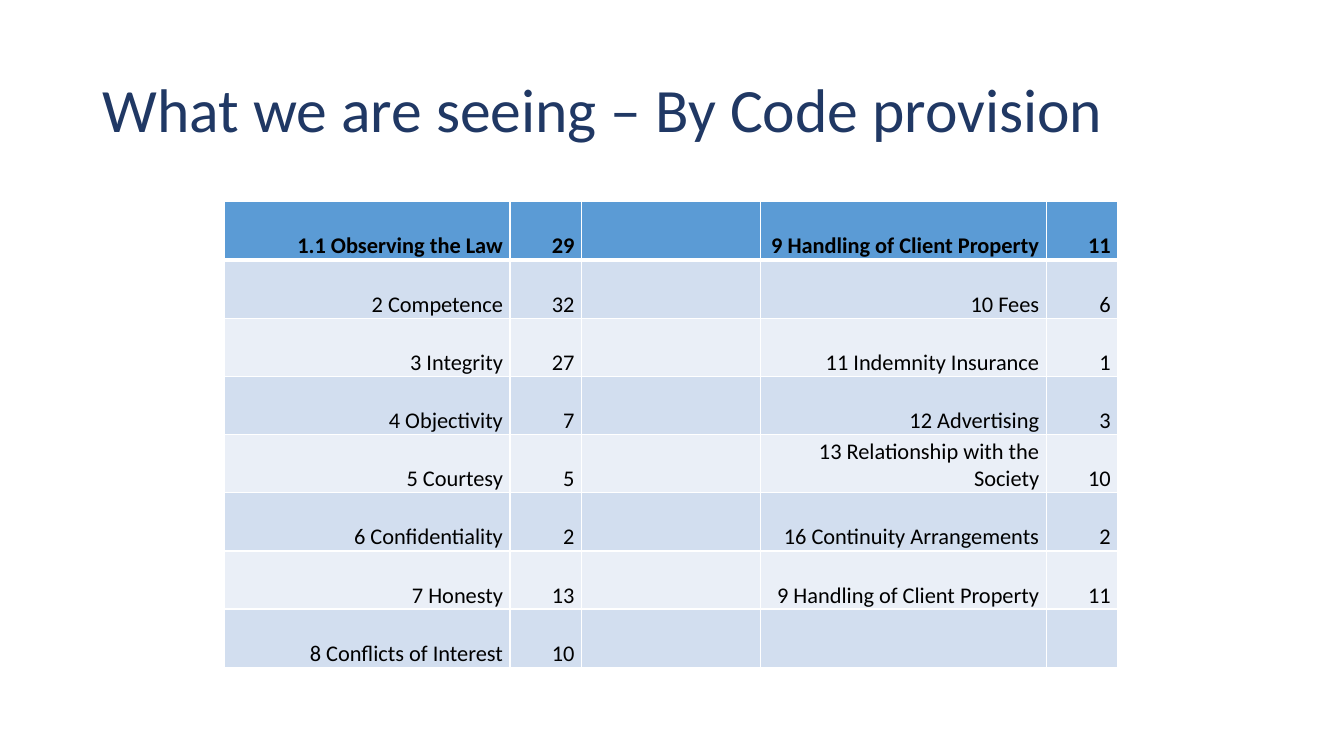
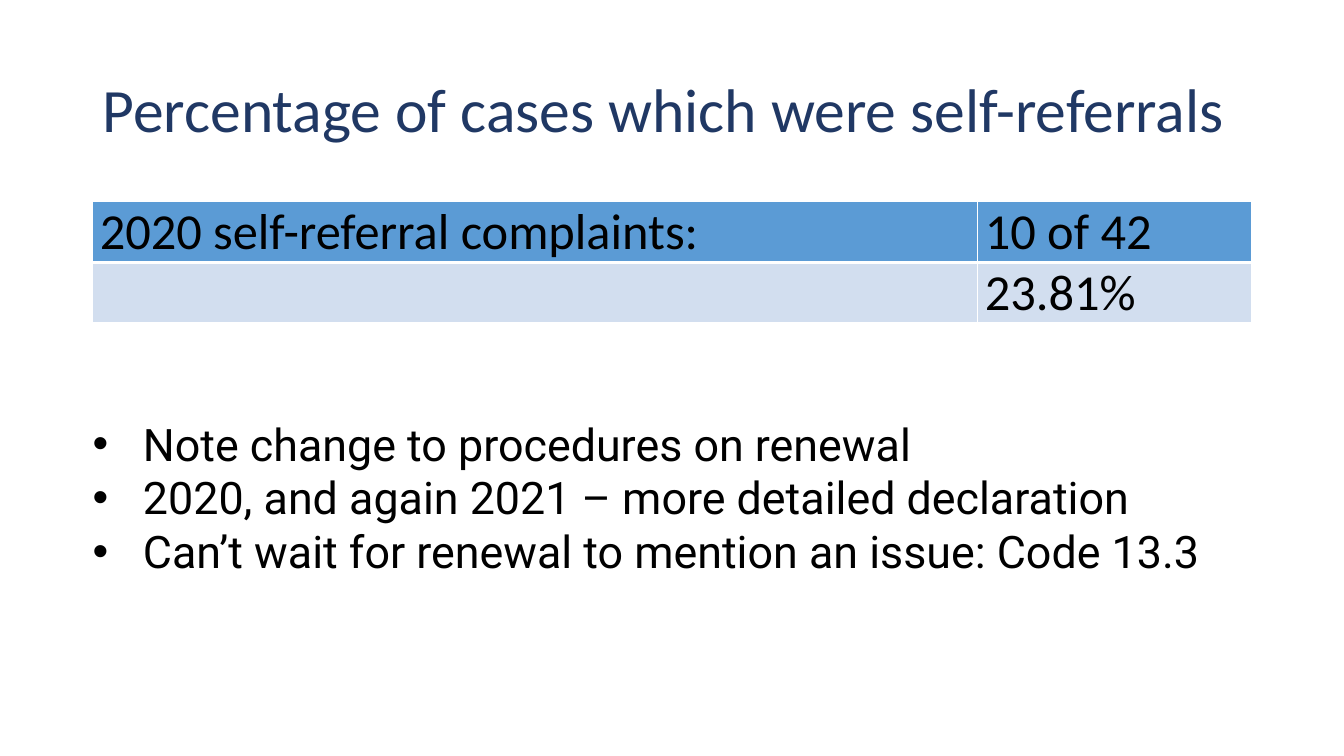
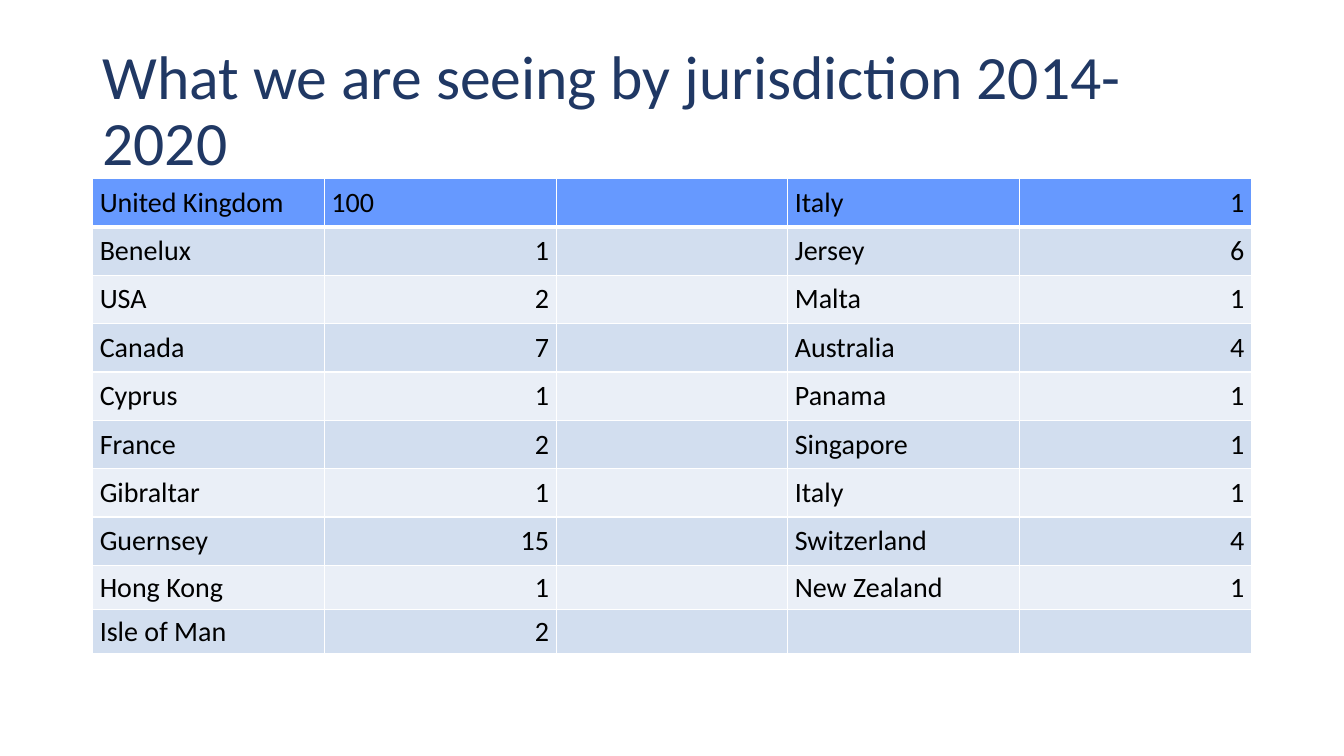
from dataclasses import dataclass

from lxml.etree import SubElement
from pptx import Presentation
from pptx.dml.color import RGBColor
from pptx.enum.text import MSO_ANCHOR, PP_ALIGN
from pptx.oxml.ns import qn
from pptx.util import Inches, Pt


# Theme: colours, fonts and type sizes
@dataclass(frozen=True)
class Theme:
    title: str = "203864"
    ink: str = "000000"
    rule: str = "FFFFFF"
    header: str = "5B9BD5"
    bright_header: str = "6699FF"
    bands: tuple = ("D2DEEF", "EAEFF7")
    font: str = "Calibri"
    note_font: str = "Roboto"
    title_size: int = 44
    figure_size: int = 36
    note_size: int = 32
    country_size: int = 20
    provision_size: int = 16
    thin: int = 1
    thick: int = 3


theme = Theme()
LEFT, RIGHT = PP_ALIGN.LEFT, PP_ALIGN.RIGHT

deck = Presentation()
deck.slide_width, deck.slide_height = Inches(13.33), Inches(7.5)
W, H = deck.slide_width, deck.slide_height
margin = int(W * 0.069)
content_width = W - 2 * margin


def style_text(paragraph, size, color=theme.ink, font=theme.font, bold=False):
    for run in paragraph.runs:
        run.font.size = Pt(size)
        run.font.name = font
        run.font.bold = bold
        run.font.color.rgb = RGBColor.from_string(color)


def add_grid(slide, rows, left, top, column_widths, row_heights, aligns,
             size, anchor, header=theme.header, bold_header=False):
    table = slide.shapes.add_table(
        len(rows), len(column_widths), left, top,
        sum(column_widths), sum(row_heights)).table
    for column, width in zip(table.columns, column_widths):
        column.width = width
    for r, (values, height) in enumerate(zip(rows, row_heights)):
        table.rows[r].height = height
        for c, value in enumerate(values):
            cell = table.cell(r, c)
            cell.margin_left = cell.margin_right = Inches(0.07)
            cell.margin_top = cell.margin_bottom = 0
            cell.vertical_anchor = anchor

            # White rules, heavier under the header row
            heavy_side = {0: "lnB", 1: "lnT"}.get(r)
            for side in ("lnL", "lnR", "lnT", "lnB"):
                weight = theme.thick if side == heavy_side else theme.thin
                line = SubElement(cell._tc.get_or_add_tcPr(), qn(f"a:{side}"), w=str(Pt(weight)))
                SubElement(SubElement(line, qn("a:solidFill")), qn("a:srgbClr"), val=theme.rule)

            cell.fill.solid()
            color = header if r == 0 else theme.bands[(r - 1) % 2]
            cell.fill.fore_color.rgb = RGBColor.from_string(color)
            if value != "":
                paragraph = cell.text_frame.paragraphs[0]
                paragraph.text = str(value)
                paragraph.alignment = aligns[c]
                style_text(paragraph, size, bold=bold_header and r == 0)
    return table


# Slides with their shared title style
slides = []
for heading in ("What we are seeing – By Code provision",
                "Percentage of cases which were self-referrals",
                "What we are seeing by jurisdiction 2014-2020"):
    slide = deck.slides.add_slide(deck.slide_layouts[6])
    title = slide.shapes.add_textbox(margin, int(H * 0.052), content_width, int(H * 0.193)).text_frame
    title.word_wrap = True
    title.vertical_anchor = MSO_ANCHOR.MIDDLE
    title.text = heading
    title.paragraphs[0].line_spacing = 0.9
    style_text(title.paragraphs[0], theme.title_size, theme.title)
    slides.append(slide)
provision_slide, referral_slide, jurisdiction_slide = slides

table_top = int(H * 0.267)

# Complaints by Code provision
provisions = [
    ("1.1 Observing the Law", 29, "", "9 Handling of Client Property", 11),
    ("2 Competence", 32, "", "10 Fees", 6),
    ("3 Integrity", 27, "", "11 Indemnity Insurance", 1),
    ("4 Objectivity", 7, "", "12 Advertising", 3),
    ("5 Courtesy", 5, "", "13 Relationship with the Society", 10),
    ("6 Confidentiality", 2, "", "16 Continuity Arrangements", 2),
    ("7 Honesty", 13, "", "9 Handling of Client Property", 11),
    ("8 Conflicts of Interest", 10, "", "", ""),
]
provision_width = W * 0.665
add_grid(provision_slide, provisions, int(W / 6), table_top,
         [int(provision_width * share) for share in (0.32, 0.08, 0.2, 0.32, 0.08)],
         [int(H * 0.077)] * len(provisions), [RIGHT] * 5,
         theme.provision_size, MSO_ANCHOR.BOTTOM, bold_header=True)

# Share of self-referrals
referrals = [("2020 self-referral complaints:", "10 of 42"), ("", "23.81%")]
add_grid(referral_slide, referrals, margin, table_top,
         [int(content_width * share) for share in (0.764, 0.236)],
         [int(H * 0.08)] * len(referrals), [LEFT] * 2,
         theme.figure_size, MSO_ANCHOR.BOTTOM)

# Renewal notes
notes = referral_slide.shapes.add_textbox(
    margin - Inches(0.1), int(H * 0.544), content_width + Inches(0.2), int(H * 0.235)).text_frame
notes.word_wrap = True
notes.text = "\n".join((
    "Note change to procedures on renewal",
    "2020, and again 2021 – more detailed declaration",
    "Can’t wait for renewal to mention an issue: Code 13.3",
))
for note in notes.paragraphs:
    properties = note._p.get_or_add_pPr()
    properties.set("marL", str(Inches(0.5)))
    properties.set("indent", str(-Inches(0.5)))
    SubElement(properties, qn("a:buFont"), typeface="Arial")
    SubElement(properties, qn("a:buChar"), char="•")
    style_text(note, theme.note_size, font=theme.note_font)

# Complaints by jurisdiction
jurisdictions = [
    ("United Kingdom", 100, "", "Italy", 1),
    ("Benelux", 1, "", "Jersey", 6),
    ("USA", 2, "", "Malta", 1),
    ("Canada", 7, "", "Australia", 4),
    ("Cyprus", 1, "", "Panama", 1),
    ("France", 2, "", "Singapore", 1),
    ("Gibraltar", 1, "", "Italy", 1),
    ("Guernsey", 15, "", "Switzerland", 4),
    ("Hong Kong", 1, "", "New Zealand", 1),
    ("Isle of Man", 2, "", "", ""),
]
jurisdiction_table = add_grid(
    jurisdiction_slide, jurisdictions, margin, int(H * 0.236),
    [content_width // 5] * 5, [Inches(0.48)] * 8 + [Inches(0.44)] * 2,
    [LEFT, RIGHT, LEFT, LEFT, RIGHT],
    theme.country_size, MSO_ANCHOR.MIDDLE, header=theme.bright_header)
jurisdiction_table.cell(0, 1).text_frame.paragraphs[0].alignment = LEFT

deck.save("out.pptx")
